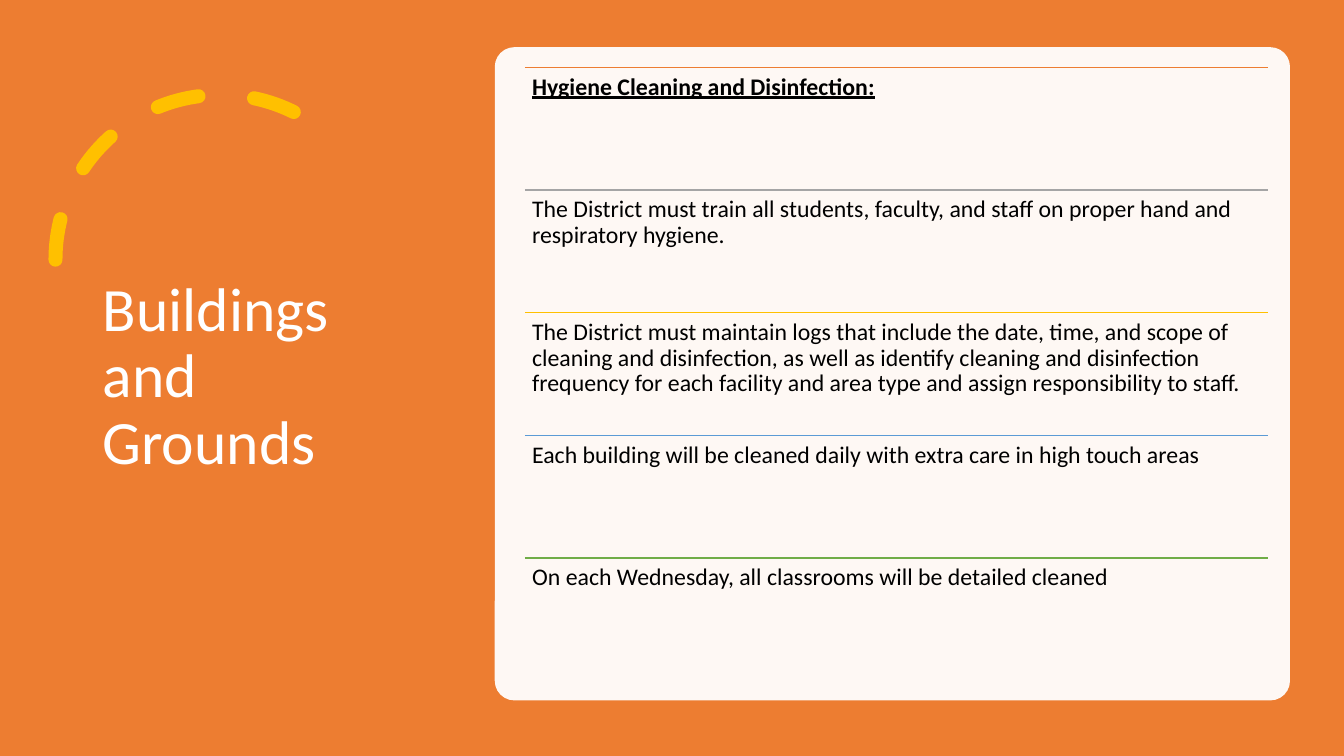
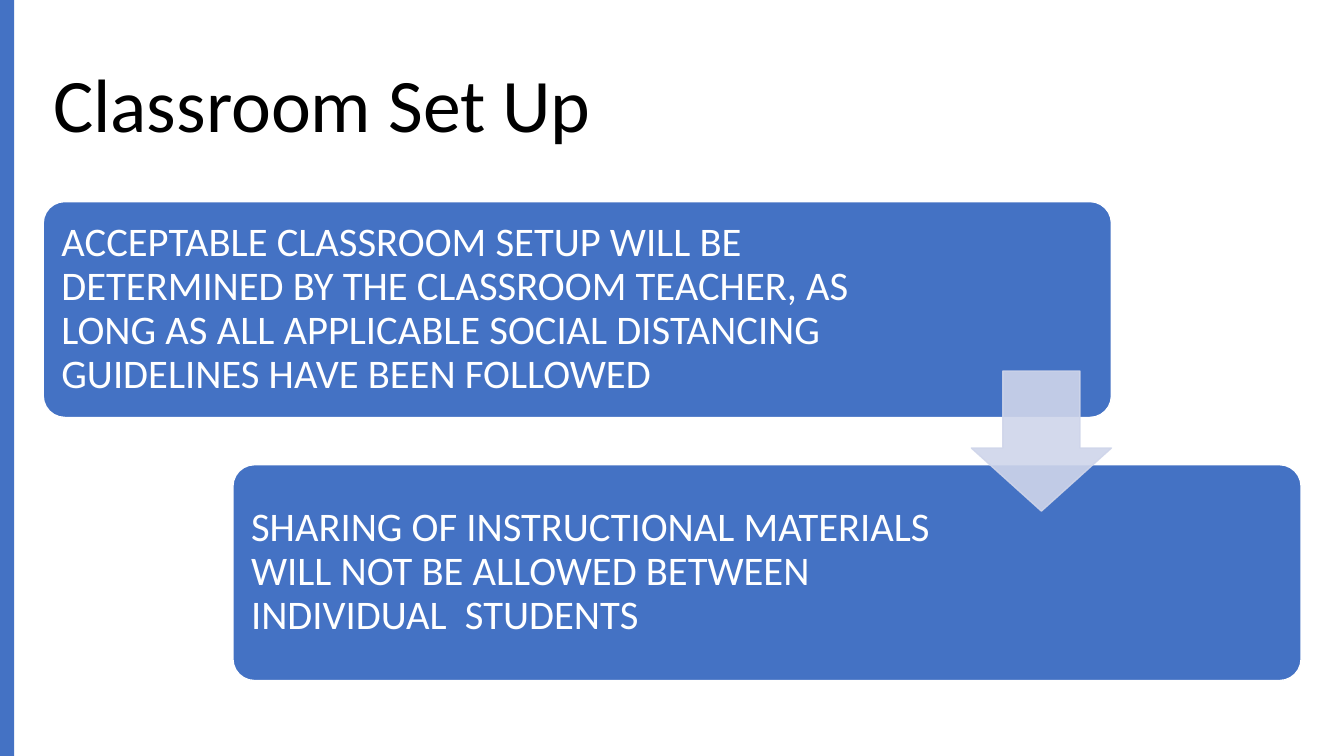
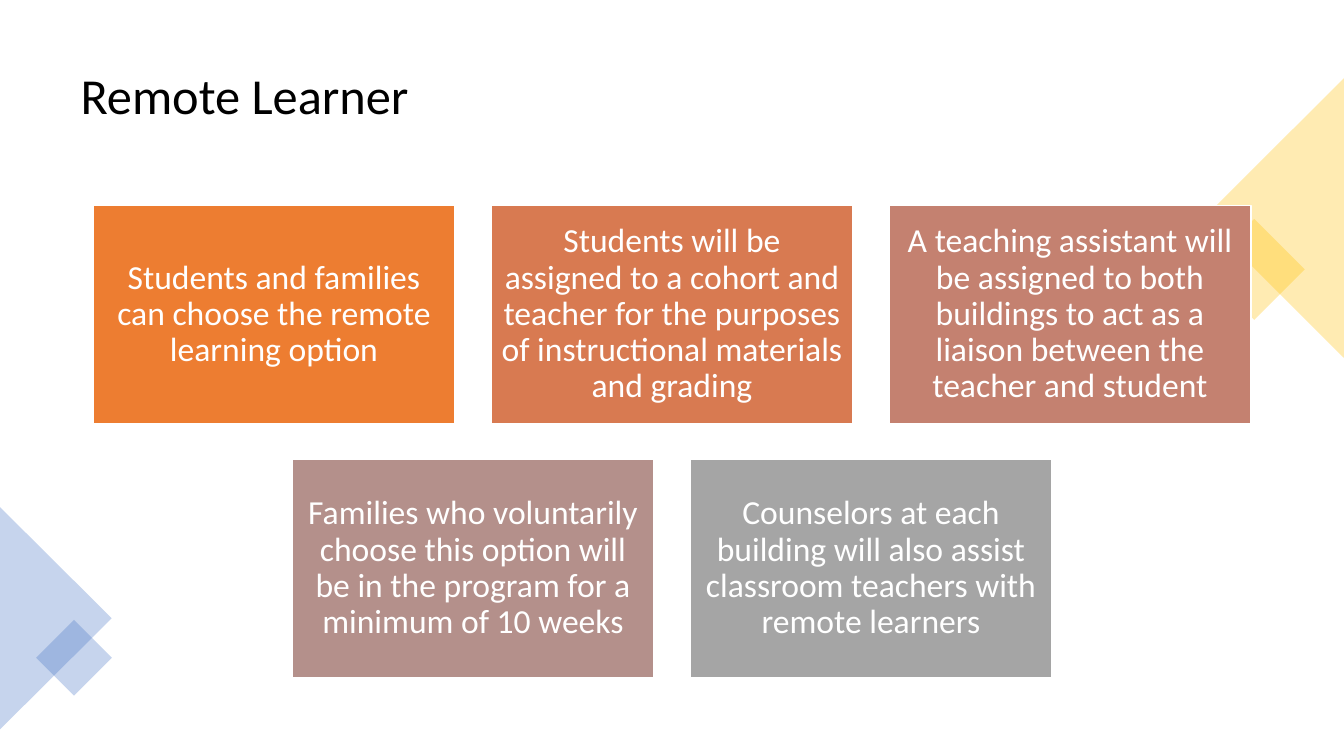
from dataclasses import dataclass

from lxml.etree import SubElement
from pptx import Presentation
from pptx.dml.color import RGBColor
from pptx.enum.dml import MSO_LINE
from pptx.enum.shapes import MSO_CONNECTOR, MSO_SHAPE
from pptx.enum.text import MSO_ANCHOR, PP_ALIGN
from pptx.oxml.ns import qn
from pptx.util import Cm, Pt


@dataclass(frozen=True)
class Theme:
    font: str = "Calibri"
    line_spacing: float = 0.9
    rule_width: float = 1
    black: str = "000000"
    white: str = "FFFFFF"
    orange: str = "ED7D31"
    grey: str = "A5A5A5"
    gold: str = "FFC000"
    sky: str = "5B9BD5"
    green: str = "70AD47"
    blue: str = "4472C4"
    pale_blue: str = "CFD5EA"
    coral: str = "D87A51"
    rose: str = "C48170"
    mauve: str = "B4908B"
    rule_size: float = 17
    step_size: float = 29
    tile_size: float = 24


THEME = Theme()
WIDTH, HEIGHT = 33.87, 19.05

# Lengths are in centimetres; boxes are (left, top, width, height).
TITLES = {
    "buildings": ("Buildings and Grounds", (2.34, 1.78, 8.2, 15.47), 44, THEME.white),
    "classroom": ("Classroom Set Up", (1.09, 0.89, 31.7, 3.68), 54, THEME.black),
    "remote": ("Remote Learner", (1.78, 0.89, 30.3, 3.15), 36, THEME.black),
}

HYGIENE_RULES = [
    ("Hygiene Cleaning and Disinfection:", THEME.orange),
    ("The District must train all students, faculty, and staff on proper hand and "
     "respiratory hygiene.", THEME.grey),
    ("The District must maintain logs that include the date, time, and scope of cleaning "
     "and disinfection, as well as identify cleaning and disinfection frequency for each "
     "facility and area type and assign responsibility to staff.", THEME.gold),
    ("Each building will be cleaned daily with extra care in high touch areas", THEME.sky),
    ("On each Wednesday, all classrooms will be detailed cleaned", THEME.green),
]

# Text and right inset
CLASSROOM_STEPS = [
    ("ACCEPTABLE CLASSROOM SETUP WILL BE DETERMINED BY THE CLASSROOM TEACHER, AS LONG AS "
     "ALL APPLICABLE SOCIAL DISTANCING GUIDELINES HAVE BEEN FOLLOWED", 5.59),
    ("SHARING OF INSTRUCTIONAL MATERIALS WILL NOT BE ALLOWED BETWEEN INDIVIDUAL  STUDENTS",
     8.59),
]

REMOTE_ROWS = [
    [
        ("Students and families can choose the remote learning option", THEME.orange),
        ("Students will be assigned to a cohort and teacher for the purposes of "
         "instructional materials and grading", THEME.coral),
        ("A teaching assistant will be assigned to both buildings to act as a liaison "
         "between the teacher and student", THEME.rose),
    ],
    [
        ("Families who voluntarily choose this option will be in the program for a "
         "minimum of 10 weeks", THEME.mauve),
        ("Counselors at each building will also assist classroom teachers with remote "
         "learners", THEME.grey),
    ],
]

CORNER_ACCENTS = [
    (MSO_SHAPE.RECTANGLE, (30.71, 5.89, 1.8, 1.8), 45, THEME.gold),
    (MSO_SHAPE.ISOSCELES_TRIANGLE, (28.58, 3.73, 7.04, 3.53), 270, THEME.gold),
    (MSO_SHAPE.ISOSCELES_TRIANGLE, (-1.4, 14.17, 5.61, 2.82), 90, THEME.blue),
    (MSO_SHAPE.RECTANGLE, (1.19, 15.9, 1.35, 1.35), 45, THEME.blue),
]


def paint(color_format, color, opacity=100):
    color_format.rgb = RGBColor.from_string(color)
    if opacity < 100:
        for element in color_format._xFill.iter(qn("a:srgbClr")):
            SubElement(element, qn("a:alpha"), val=str(opacity * 1000))


def add_shape(slide, kind, box, fill=None, line=None, opacity=100, rotation=0, adjustments=()):
    shape = slide.shapes.add_shape(kind, *map(Cm, box))
    shape.shadow.inherit = False
    shape.rotation = rotation
    for index, value in enumerate(adjustments):
        shape.adjustments[index] = value
    for target, color in ((shape.fill, fill), (shape.line.fill, line)):
        if color:
            target.solid()
            paint(target.fore_color, color, opacity)
        else:
            target.background()
    if line:
        shape.line.width = Pt(THEME.rule_width)
    return shape


def write(shape, text, size, color, insets=(0.25, 0.13, 0.25, 0.13),
          anchor=MSO_ANCHOR.MIDDLE, align=PP_ALIGN.LEFT, **font_format):
    """Fill a shape with one paragraph; insets are left, top, right, bottom."""
    frame = shape.text_frame
    frame.word_wrap = True
    frame.vertical_anchor = anchor
    for side, inset in zip(("left", "top", "right", "bottom"), insets):
        setattr(frame, f"margin_{side}", Cm(inset))
    paragraph = frame.paragraphs[0]
    paragraph.alignment = align
    paragraph.line_spacing = THEME.line_spacing
    run = paragraph.add_run()
    run.text = text
    for name, value in {"name": THEME.font, "size": Pt(size), **font_format}.items():
        setattr(run.font, name, value)
    paint(run.font.color, color)


def add_text(slide, box, *args, **options):
    write(slide.shapes.add_textbox(*map(Cm, box)), *args, **options)


def add_title(slide, key):
    text, box, size, color = TITLES[key]
    add_text(slide, box, text, size, color)


def add_rule(slide, left, top, width, color):
    rule = slide.shapes.add_connector(
        MSO_CONNECTOR.STRAIGHT, *map(Cm, (left, top, left + width, top)))
    rule.line.width = Pt(THEME.rule_width)
    paint_line(rule.line, color)
    SubElement(rule._element.spPr, qn("a:effectLst"))


def paint_line(line, color):
    line.fill.solid()
    paint(line.fill.fore_color, color)


def add_dashed_arc(slide):
    arc = add_shape(slide, MSO_SHAPE.ARC, (1.4, 2.39, 8.31, 8.31),
                    line=THEME.gold, adjustments=(146.13, 0))
    arc.line.width = Pt(10)
    arc.line.dash_style = MSO_LINE.DASH
    arc.line._get_or_add_ln().set("cap", "rnd")
    arc._element.spPr.xfrm.set("flipH", "1")


def build_buildings(slide):
    add_shape(slide, MSO_SHAPE.RECTANGLE, (0, 0, WIDTH, HEIGHT), THEME.orange)
    add_dashed_arc(slide)
    add_title(slide, "buildings")
    add_shape(slide, MSO_SHAPE.ROUNDED_RECTANGLE, (12.47, 1.19, 20.04, 16.46),
              THEME.white, opacity=95, adjustments=(0.03,))
    left, first_top, width, height = 13.23, 1.7, 18.72, 3.09
    for index, (text, color) in enumerate(HYGIENE_RULES):
        top = first_top + index * height
        is_heading = index == 0
        add_rule(slide, left, top, width, color)
        add_text(slide, (left, top, width, height), text, THEME.rule_size, THEME.black,
                 insets=(0.18,) * 4, anchor=MSO_ANCHOR.TOP,
                 bold=is_heading, underline=is_heading)


def build_classroom(slide):
    add_title(slide, "classroom")
    add_shape(slide, MSO_SHAPE.RECTANGLE, (0, 0, 0.36, HEIGHT), THEME.blue)
    left, top, width, height = 1.09, 5.08, 26.92, 5.44
    shift, pitch, arrow = 4.78, 6.63, 3.53
    for index, (text, right_inset) in enumerate(CLASSROOM_STEPS):
        box = (left + index * shift, top + index * pitch, width, height)
        step = add_shape(slide, MSO_SHAPE.ROUNDED_RECTANGLE, box, THEME.blue, THEME.white,
                         adjustments=(0.1,))
        write(step, text, THEME.step_size, THEME.white, insets=(0.3, 0.3, right_inset, 0.3))
    arrow_top = top + (height + pitch - arrow) / 2
    add_shape(slide, MSO_SHAPE.DOWN_ARROW, (left + width - arrow, arrow_top, arrow, arrow),
              THEME.pale_blue, THEME.pale_blue, opacity=90, adjustments=(0.55, 0.45))


def build_remote(slide):
    add_title(slide, "remote")
    for kind, box, rotation, color in CORNER_ACCENTS:
        add_shape(slide, kind, box, color, opacity=30, rotation=rotation)
    first_top, width, height, gap = 5.18, 9.12, 5.49, 0.91
    for row_index, row in enumerate(REMOTE_ROWS):
        row_left = (WIDTH - len(row) * width - (len(row) - 1) * gap) / 2
        top = first_top + row_index * (height + gap)
        for column, (text, color) in enumerate(row):
            box = (row_left + column * (width + gap), top, width, height)
            tile = add_shape(slide, MSO_SHAPE.RECTANGLE, box, color, THEME.white)
            write(tile, text, THEME.tile_size, THEME.white, insets=(0.25,) * 4,
                  align=PP_ALIGN.CENTER)


def main():
    presentation = Presentation()
    presentation.slide_width, presentation.slide_height = Cm(WIDTH), Cm(HEIGHT)
    blank_layout = presentation.slide_layouts[6]
    for build in (build_buildings, build_classroom, build_remote):
        build(presentation.slides.add_slide(blank_layout))
    presentation.save("out.pptx")


if __name__ == "__main__":
    main()
